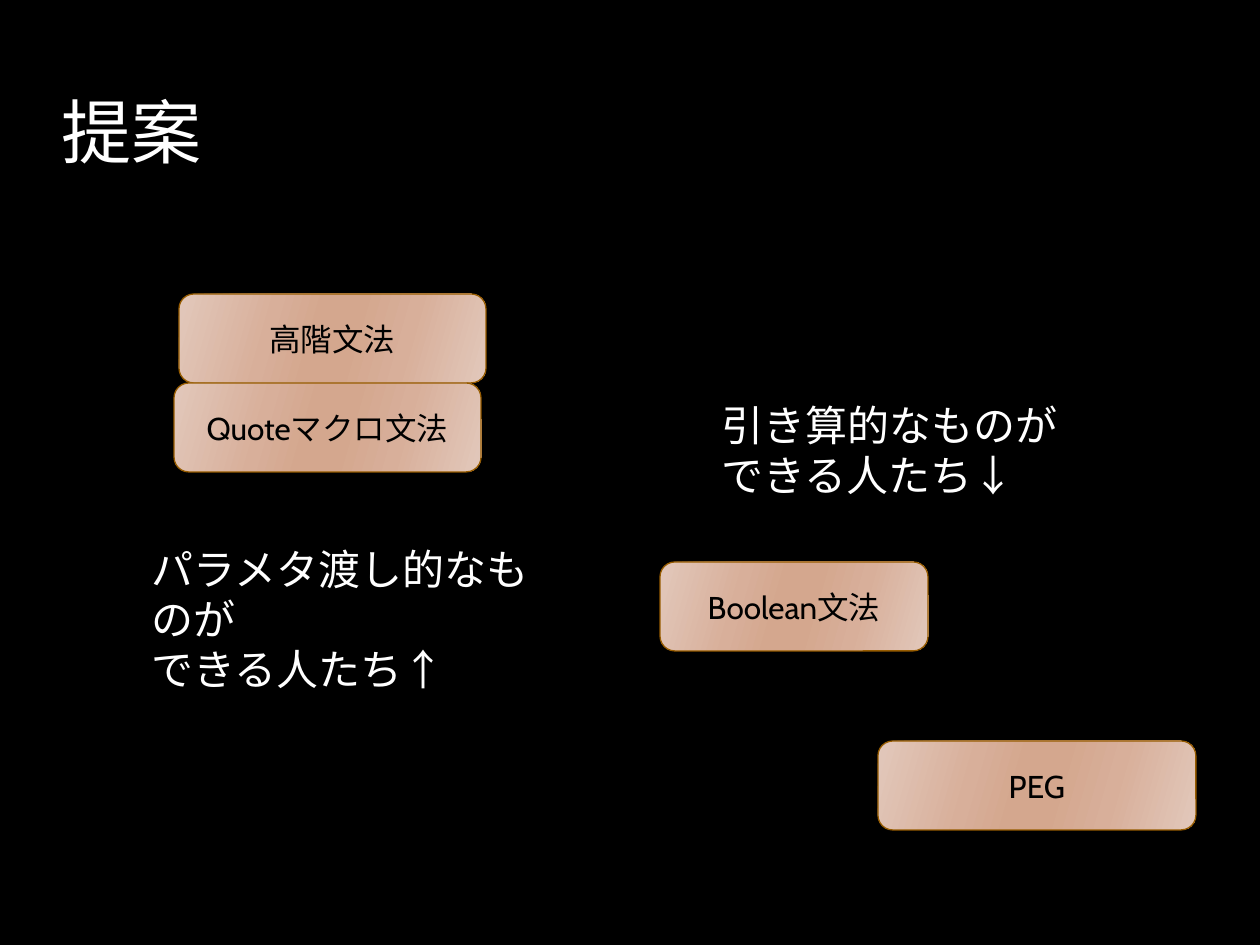
import pptx
import pptx.dml.color
import pptx.enum.shapes
import pptx.enum.text
import pptx.oxml
import pptx.oxml.ns
import pptx.util
from dataclasses import dataclass

PX_PER_INCH = 126


def px(length):
    return pptx.util.Emu(length * 914400 // PX_PER_INCH)


def color(value):
    return pptx.dml.color.RGBColor.from_string(value)


@dataclass(frozen=True)
class Theme:
    font: str = "Cabin"
    background: str = "000000"
    light_text: str = "FFFFFF"
    dark_text: str = "000000"
    outline: str = "975C00"
    gradient: tuple = (
        (0, "E2C8BB"), (30, "D8AF9A"), (45, "D4A78E"),
        (55, "D4A78E"), (73, "D8AF9A"), (100, "E2C8BB"),
    )
    gradient_angle: int = 16
    title_size: int = 40
    note_size: int = 24
    label_size: int = 18


class SlideBuilder:
    def __init__(self, presentation, theme):
        self.theme = theme
        self.slide = presentation.slides.add_slide(presentation.slide_layouts[6])
        fill = self.slide.background.fill
        fill.solid()
        fill.fore_color.rgb = color(theme.background)

    def apply(self, target, values):
        for name, value in values.items():
            setattr(target, name, value)

    def fill_text(self, shape, text, size, text_color, frame_format, paragraph_format):
        frame = shape.text_frame
        self.apply(frame, {"word_wrap": True, **frame_format})
        paragraph = frame.paragraphs[0]
        paragraph.text = text
        self.apply(paragraph, paragraph_format)
        for run in paragraph.runs:
            self.apply(run.font, {"name": self.theme.font, "size": pptx.util.Pt(size)})
            run.font.color.rgb = color(text_color)

    def text(self, box, text, size, frame_format, paragraph_format):
        shape = self.slide.shapes.add_textbox(*map(px, box))
        self.fill_text(shape, text, size, self.theme.light_text,
                       frame_format, paragraph_format)

    def title(self, box, text):
        self.text(box, text, self.theme.title_size,
                  {"vertical_anchor": pptx.enum.text.MSO_ANCHOR.BOTTOM},
                  {"space_before": pptx.util.Pt(4)})

    def note(self, box, text):
        self.text(box, text, self.theme.note_size,
                  {"auto_size": pptx.enum.text.MSO_AUTO_SIZE.SHAPE_TO_FIT_TEXT}, {})

    def gradient(self, shape):
        stops = "".join(
            f'<a:gs pos="{position * 1000}"><a:srgbClr val="{value}"/></a:gs>'
            for position, value in self.theme.gradient
        )
        fill = pptx.oxml.parse_xml(
            f'<a:gradFill {pptx.oxml.ns.nsdecls("a")} rotWithShape="1">'
            f"<a:gsLst>{stops}</a:gsLst>"
            f'<a:lin ang="{self.theme.gradient_angle * 60000}" scaled="0"/></a:gradFill>'
        )
        geometry = shape.element.spPr.find(pptx.oxml.ns.qn("a:prstGeom"))
        geometry.addnext(fill)

    def grammar(self, box, text):
        shape = self.slide.shapes.add_shape(
            pptx.enum.shapes.MSO_SHAPE.ROUNDED_RECTANGLE, *map(px, box))
        shape.shadow.inherit = False
        self.gradient(shape)
        shape.line.color.rgb = color(self.theme.outline)
        shape.line.width = pptx.util.Pt(0.75)
        self.fill_text(shape, text, self.theme.label_size, self.theme.dark_text,
                       {"vertical_anchor": pptx.enum.text.MSO_ANCHOR.MIDDLE},
                       {"alignment": pptx.enum.text.PP_ALIGN.CENTER})


def main():
    presentation = pptx.Presentation()
    presentation.slide_width = px(1260)
    presentation.slide_height = px(945)
    builder = SlideBuilder(presentation, Theme())

    builder.title((49, 32, 1058, 147), "提案")

    grammar_height = 89
    for left, top, width, name in (
        (878, 741, 318, "PEG"),
        (179, 294, 307, "高階文法"),
        (660, 562, 268, "Boolean文法"),
        (174, 294 + grammar_height, 307, "Quoteマクロ文法"),
    ):
        builder.grammar((left, top, width, grammar_height), name)

    builder.note((709, 393, 377, 115), "引き算的なものが\vできる人たち↓")
    builder.note((139, 537, 402, 115), "パラメタ渡し的なものが\vできる人たち↑")

    presentation.save("out.pptx")


if __name__ == "__main__":
    main()
